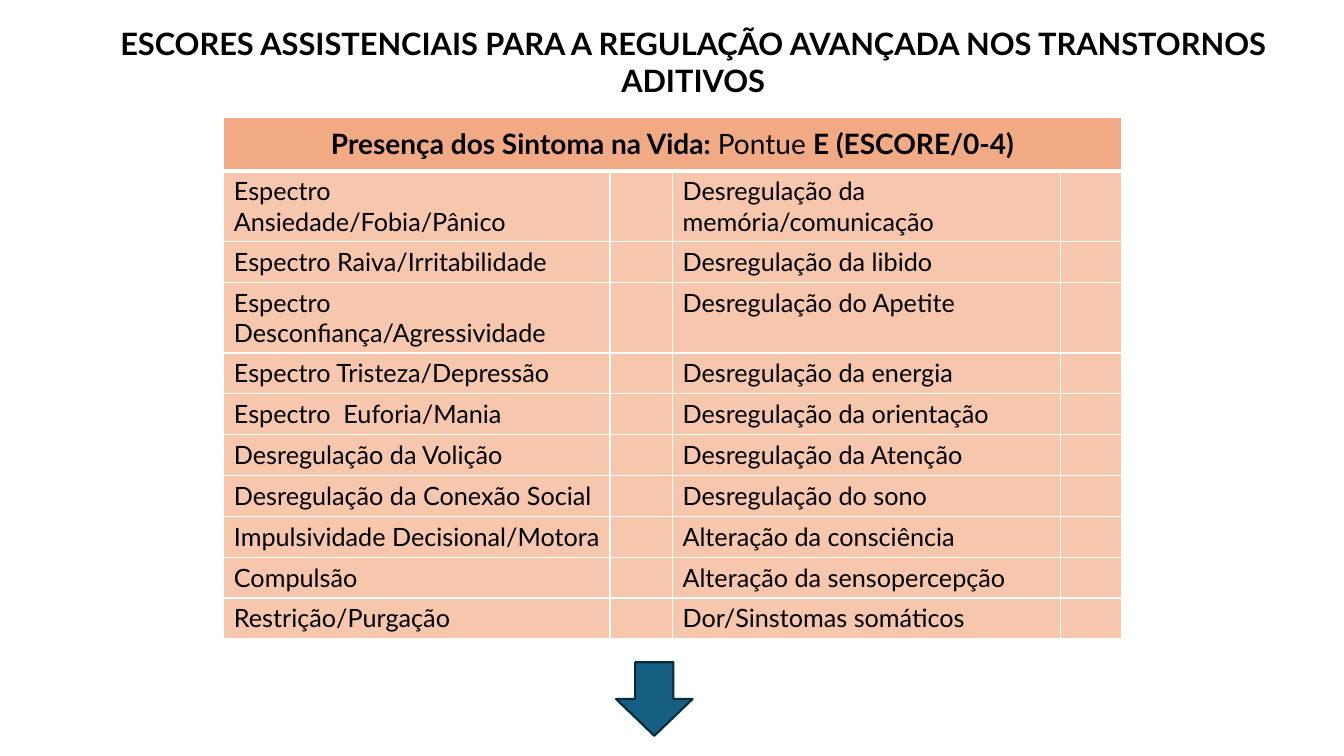
from dataclasses import dataclass

from lxml import etree
from pptx import Presentation
from pptx.dml.color import RGBColor
from pptx.enum.shapes import MSO_SHAPE
from pptx.enum.text import MSO_ANCHOR, MSO_AUTO_SIZE, PP_ALIGN
from pptx.oxml.ns import qn
from pptx.util import Inches, Pt

CENTER = PP_ALIGN.CENTER
LEFT = PP_ALIGN.LEFT
TOP = MSO_ANCHOR.TOP
FIXED_SIZE = MSO_AUTO_SIZE.NONE
DOWN_ARROW = MSO_SHAPE.DOWN_ARROW
TITLE_ONLY = 5


@dataclass(frozen=True)
class Theme:
    font: str = "Lato"
    ink: str = "000000"
    heading_fill: str = "F2AA84"
    symptom_fill: str = "F6C6AD"
    grid: str = "FFFFFF"
    arrow_fill: str = "156082"
    arrow_line: str = "092A39"
    title_size: int = 22
    heading_size: int = 20
    symptom_size: int = 18
    grid_width: int = 1
    heading_rule_width: int = 3
    arrow_line_width: float = 1.5


@dataclass(frozen=True)
class Box:
    left: float
    top: float
    width: float
    height: float

    def lengths(self) -> tuple:
        return tuple(Inches(n) for n in (self.left, self.top, self.width, self.height))


@dataclass(frozen=True)
class Phrase:
    text: str
    bold: bool = False


@dataclass(frozen=True)
class SymptomPair:
    first: str
    second: str


THEME = Theme()
TITLE_BOX = Box(0.68, 0.2, 12.39, 0.83)
TABLE_BOX = Box(2.22, 1.16, 8.9, 4.46)
ARROW_BOX = Box(6.11, 6.57, 0.76, 0.73)
COLUMN_WIDTHS = (3.83, 0.62, 3.85, 0.6)

TITLE = [
    Phrase("ESCORES ASSISTENCIAIS PARA A REGULAÇÃO AVANÇADA NOS TRANSTORNOS ADITIVOS", True)
]
HEADING = [
    Phrase("Presença dos Sintoma na Vida: ", True),
    Phrase("Pontue "),
    Phrase("E (ESCORE/0-4)", True),
]
SYMPTOMS = [
    SymptomPair("Espectro Ansiedade/Fobia/Pânico", "Desregulação da memória/comunicação"),
    SymptomPair("Espectro Raiva/Irritabilidade", "Desregulação da libido"),
    SymptomPair("Espectro Desconfiança/Agressividade", "Desregulação do Apetite"),
    SymptomPair("Espectro Tristeza/Depressão", "Desregulação da energia"),
    SymptomPair("Espectro  Euforia/Mania", "Desregulação da orientação"),
    SymptomPair("Desregulação da Volição", "Desregulação da Atenção"),
    SymptomPair("Desregulação da Conexão Social", "Desregulação do sono"),
    SymptomPair("Impulsividade Decisional/Motora", "Alteração da consciência"),
    SymptomPair("Compulsão", "Alteração da sensopercepção"),
    SymptomPair("Restrição/Purgação", "Dor/Sinstomas somáticos"),
]


def apply_format(target, values: dict) -> None:
    for attribute, value in values.items():
        setattr(target, attribute, value)


def write_phrases(frame, phrases: list[Phrase], size: int, alignment) -> None:
    paragraph = frame.paragraphs[0]
    apply_format(paragraph, {"alignment": alignment, "line_spacing": 1.0})
    apply_format(paragraph.font, {"size": Pt(size), "name": THEME.font})
    for phrase in phrases:
        run = paragraph.add_run()
        run.text = phrase.text
        apply_format(run.font, {"size": Pt(size), "name": THEME.font, "bold": phrase.bold})
        run.font.color.rgb = RGBColor.from_string(THEME.ink)


def paint_cell(cell, fill: str, top_width: int, bottom_width: int) -> None:
    properties = cell._tc.get_or_add_tcPr()
    widths = {
        "a:lnL": THEME.grid_width,
        "a:lnR": THEME.grid_width,
        "a:lnT": top_width,
        "a:lnB": bottom_width,
    }
    for edge, width in widths.items():
        border = etree.SubElement(properties, qn(edge), w=str(Pt(width)))
        solid = etree.SubElement(border, qn("a:solidFill"))
        etree.SubElement(solid, qn("a:srgbClr"), val=THEME.grid)
    cell.fill.solid()
    cell.fill.fore_color.rgb = RGBColor.from_string(fill)


def add_title(slide) -> None:
    title = slide.shapes.title
    left, top, width, height = TITLE_BOX.lengths()
    apply_format(title, {"left": left, "top": top, "width": width, "height": height})
    apply_format(
        title.text_frame,
        {"word_wrap": True, "auto_size": FIXED_SIZE, "vertical_anchor": TOP},
    )
    write_phrases(title.text_frame, TITLE, THEME.title_size, CENTER)


def add_symptom_table(slide) -> None:
    table = slide.shapes.add_table(
        len(SYMPTOMS) + 1, len(COLUMN_WIDTHS), *TABLE_BOX.lengths()
    ).table
    for column, width in zip(table.columns, COLUMN_WIDTHS):
        column.width = Inches(width)

    thin, thick = THEME.grid_width, THEME.heading_rule_width
    heading = table.cell(0, 0)
    heading.merge(table.cell(0, len(COLUMN_WIDTHS) - 1))
    apply_format(heading, {"margin_top": Inches(0.1), "margin_bottom": Inches(0.1)})
    write_phrases(heading.text_frame, HEADING, THEME.heading_size, CENTER)
    for column in range(len(COLUMN_WIDTHS)):
        paint_cell(table.cell(0, column), THEME.heading_fill, thin, thick)

    for row, pair in enumerate(SYMPTOMS, start=1):
        for column, text in enumerate((pair.first, "", pair.second, "")):
            cell = table.cell(row, column)
            phrases = [Phrase(text)] if text else []
            write_phrases(cell.text_frame, phrases, THEME.symptom_size, LEFT)
            paint_cell(cell, THEME.symptom_fill, thick if row == 1 else thin, thin)


def add_next_step_arrow(slide) -> None:
    arrow = slide.shapes.add_shape(DOWN_ARROW, *ARROW_BOX.lengths())
    arrow.shadow.inherit = False
    arrow.fill.solid()
    arrow.fill.fore_color.rgb = RGBColor.from_string(THEME.arrow_fill)
    arrow.line.color.rgb = RGBColor.from_string(THEME.arrow_line)
    arrow.line.width = Pt(THEME.arrow_line_width)


def main() -> None:
    presentation = Presentation()
    apply_format(
        presentation, {"slide_width": Inches(13.33), "slide_height": Inches(7.5)}
    )
    slide = presentation.slides.add_slide(presentation.slide_layouts[TITLE_ONLY])
    add_title(slide)
    add_symptom_table(slide)
    add_next_step_arrow(slide)
    presentation.save("out.pptx")


if __name__ == "__main__":
    main()
